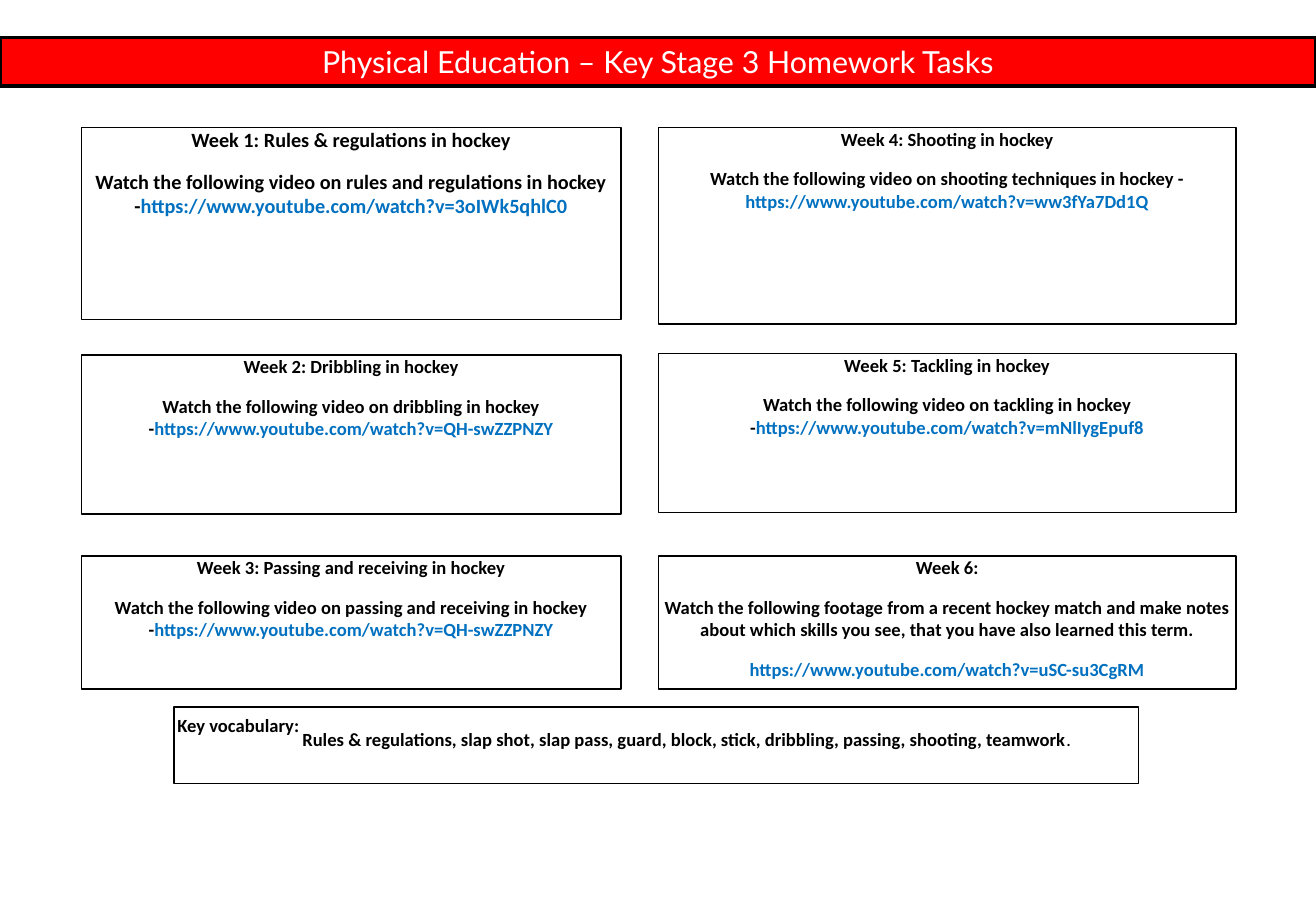
"""Build the hockey homework slide for Key Stage 3 Physical Education."""
from dataclasses import dataclass

from pptx import Presentation
from pptx.dml.color import RGBColor
from pptx.enum.shapes import MSO_SHAPE
from pptx.enum.text import MSO_ANCHOR, PP_ALIGN
from pptx.util import Pt

RECT = MSO_SHAPE.RECTANGLE
TOP = MSO_ANCHOR.TOP
LEFT, CENTER = PP_ALIGN.LEFT, PP_ALIGN.CENTER
PX = 9144


@dataclass(frozen=True)
class Theme:
    black: RGBColor = RGBColor(0, 0, 0)
    white: RGBColor = RGBColor(255, 255, 255)
    red: RGBColor = RGBColor(255, 0, 0)
    link: RGBColor = RGBColor(0, 112, 192)
    title_font: str = "Lato"
    body_font: str = "Calibri"
    title: int = 18
    large: int = 12
    body: int = 11
    small: int = 9
    thin: float = 1
    thick: float = 2.25
    gap: float = 10.4
    vocabulary_line: float = 8.6


THEME = Theme()
COLUMNS = [(67, 444), (542, 475)]
VIDEO = "Watch the following video on "
URL = "https://www.youtube.com/watch?v="

# Each week: column, top, height, type size, heading, paragraphs of (text, video id).
WEEKS = [
    (0, 105, 158, THEME.large, "Week 1: Rules & regulations in hockey",
     [(VIDEO + "rules and regulations in hockey -", "3oIWk5qhlC0")]),
    (0, 292, 131, THEME.body, "Week 2: Dribbling in hockey",
     [(VIDEO + "dribbling in hockey -", "QH-swZZPNZY")]),
    (0, 458, 109, THEME.body, "Week 3: Passing and receiving in hockey",
     [(VIDEO + "passing and receiving in hockey -", "QH-swZZPNZY")]),
    (1, 105, 162, THEME.body, "Week 4: Shooting in hockey",
     [(VIDEO + "shooting techniques in hockey - ", "ww3fYa7Dd1Q")]),
    (1, 291, 131, THEME.body, "Week 5: Tackling in hockey",
     [(VIDEO + "tackling in hockey -", "mNlIygEpuf8")]),
    (1, 458, 109, THEME.body, "Week 6:",
     [("Watch the following footage from a recent hockey match and make notes "
       "about which skills you see, that you have also learned this term.", ""),
      ("", "uSC-su3CgRM")]),
]
VOCABULARY = ("Rules & regulations, slap shot, slap pass, guard, block, stick, "
              "dribbling, passing, shooting, teamwork")


def add_box(s, x, y, w, h, insets=(0, 0, 0, 0), fill=None, line=THEME.thin):
    sp = s.shapes.add_shape(RECT, x * PX, y * PX, w * PX, h * PX)
    sp.shadow.inherit = False
    if fill is None:
        sp.fill.background()
    else:
        sp.fill.solid()
        sp.fill.fore_color.rgb = fill
    sp.line.color.rgb = THEME.black
    sp.line.width = Pt(line)
    tf = sp.text_frame
    tf.word_wrap = True
    tf.vertical_anchor = TOP
    tf.margin_left, tf.margin_top, tf.margin_right, tf.margin_bottom = (
        inset * PX for inset in insets)
    return tf


def add_run(p, text, color=None):
    r = p.add_run()
    r.text = text
    if color is not None:
        r.font.color.rgb = color
    return r


def add_paragraph(tf, text, size, color=THEME.black, bold=True,
                  font=THEME.body_font, align=CENTER):
    p = tf.paragraphs[0]
    if p.runs:
        p = tf.add_paragraph()
    p.alignment = align
    p.font.name = font
    p.font.size = Pt(size)
    p.font.bold = bold
    p.font.color.rgb = color
    if text:
        add_run(p, text, color)
    return p


def add_title(s):
    tf = add_box(s, 0, 31, 1083, 40, (10, 5, 10, 5), THEME.red, THEME.thick)
    add_paragraph(tf, "Physical Education – Key Stage 3 Homework Tasks", THEME.title,
                  THEME.white, False, THEME.title_font)


def add_week(s, column, top, height, size, heading, tasks):
    x, w = COLUMNS[column]
    tf = add_box(s, x, top, w, height)
    add_paragraph(tf, heading, size)
    for text, video in tasks:
        p = add_paragraph(tf, text, size)
        p.space_before = Pt(THEME.gap)
        if video:
            add_run(p, URL + video, THEME.link)


def add_vocabulary(s):
    tf = add_box(s, 143, 582, 794, 63, (3, 12, 0, 0))
    add_paragraph(tf, "Key vocabulary:", THEME.body, align=LEFT)
    p = add_paragraph(tf, VOCABULARY, THEME.body)
    p._p.get_or_add_pPr().set("marL", str(47 * PX))
    add_run(p, ".", THEME.black).font.size = Pt(THEME.small)
    for p in tf.paragraphs:
        p.line_spacing = Pt(THEME.vocabulary_line)


def main():
    prs = Presentation()
    prs.slide_width, prs.slide_height = 1083 * PX, 750 * PX
    s = prs.slides.add_slide(prs.slide_layouts[6])
    add_title(s)
    for week in WEEKS:
        add_week(s, *week)
    add_vocabulary(s)
    prs.save("out.pptx")


if __name__ == "__main__":
    main()
